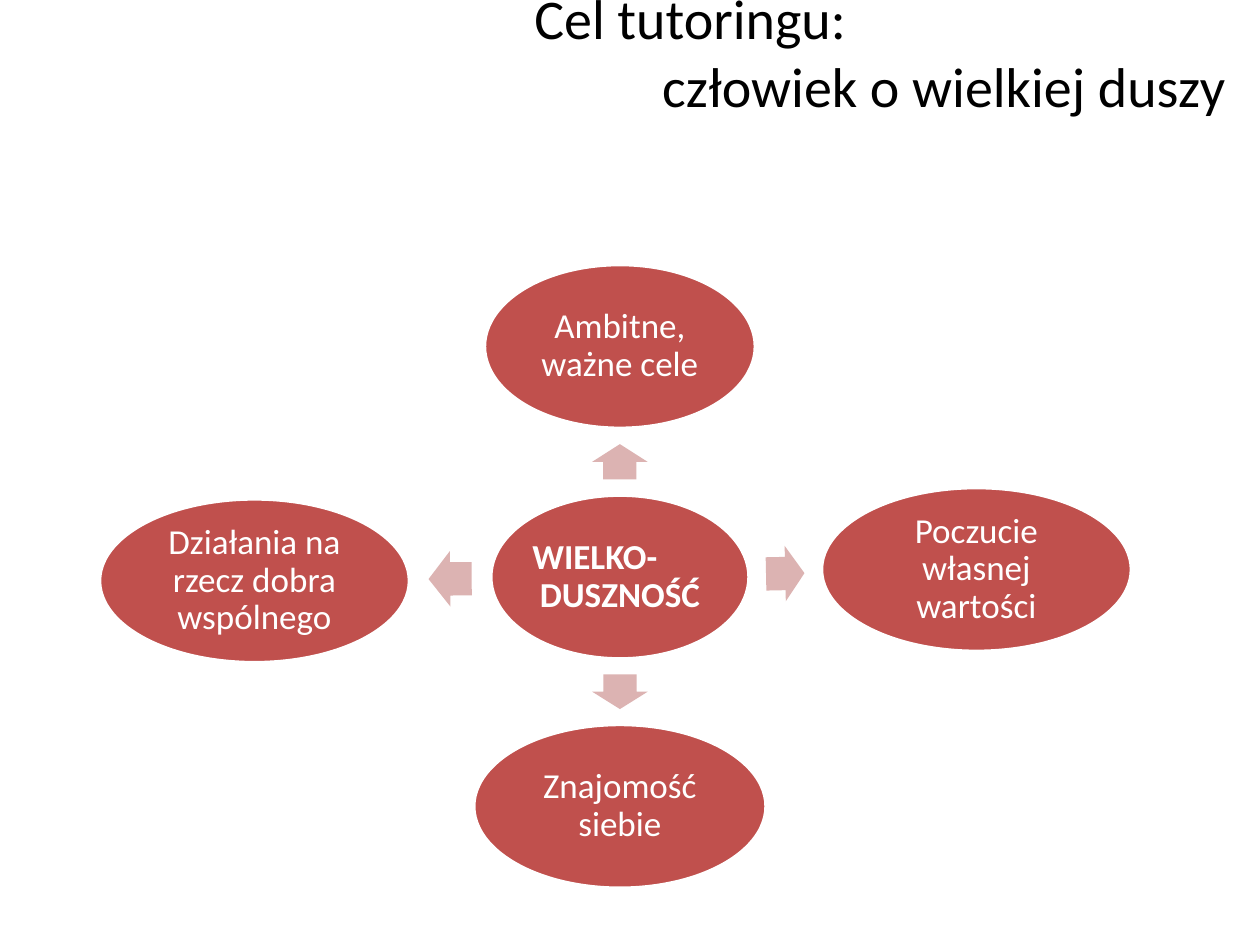
from dataclasses import dataclass
from math import atan2, degrees, hypot

from pptx import Presentation
from pptx.dml.color import RGBColor
from pptx.enum.shapes import MSO_SHAPE as Shape
from pptx.enum.text import MSO_ANCHOR as Anchor, MSO_AUTO_SIZE as AutoSize, PP_ALIGN as Align
from pptx.util import Inches, Pt

COLS, ROWS = 100, 75  # grid over the slide


@dataclass(frozen=True)
class Theme:
    font: str = "Calibri"
    title_size: int = 32
    node_size: int = 20
    ink: RGBColor = RGBColor(0x00, 0x00, 0x00)
    light: RGBColor = RGBColor(0xFF, 0xFF, 0xFF)
    node: RGBColor = RGBColor(0xC0, 0x50, 0x4D)
    arrow: RGBColor = RGBColor(0xDC, 0xB3, 0xB2)


@dataclass(frozen=True)
class Node:
    """Ellipse given by its centre and width in grid cells."""
    x: float
    y: float
    w: float
    lines: tuple
    h: float = 13


THEME = Theme()
TITLE = (("Cel tutoringu:", Align.LEFT), ("człowiek o wielkiej duszy", Align.RIGHT))
HUB = Node(49.2, 45.8, 20.5, (("WIELKO-", Align.LEFT), ("DUSZNOŚĆ", Align.CENTER)))
SPOKES = [
    Node(49.2, 27.5, 21.5, (("Ambitne, ważne cele", Align.CENTER),)),
    Node(77.5, 45.2, 24.6, (("Poczucie własnej wartości", Align.CENTER),)),
    Node(49.2, 64, 23.2, (("Znajomość siebie", Align.CENTER),)),
    Node(20.2, 46.1, 24.6, (("Działania na rzecz dobra wspólnego", Align.CENTER),)),
]
ARROW_WIDTH = 4.4
ARROW_SHARE = 0.53  # arrow length as a share of the gap it bridges


def set_attrs(obj, values):
    for name, value in values.items():
        setattr(obj, name, value)


def grid_box(prs, left, top, w, h):
    col, row = prs.slide_width / COLS, prs.slide_height / ROWS
    return [round(v) for v in (left * col, top * row, w * col, h * row)]


def write_lines(tf, lines, size, color, bold=False, spacing=1.0):
    for i, (text, align) in enumerate(lines):
        p = tf.paragraphs[0] if i == 0 else tf.add_paragraph()
        set_attrs(p, {"alignment": align, "line_spacing": spacing,
                      "space_before": Pt(0), "space_after": Pt(0)})
        r = p.add_run()
        r.text = text
        set_attrs(r.font, {"name": THEME.font, "size": Pt(size), "bold": bold})
        r.font.color.rgb = color


def add_title(prs, s):
    sp = s.shapes.title
    box = grid_box(prs, 41.4, 1.3, 56.9, 5.5)
    set_attrs(sp, dict(zip(("left", "top", "width", "height"), box)))
    tf = sp.text_frame
    set_attrs(tf, {"word_wrap": True, "auto_size": AutoSize.NONE,
                   "vertical_anchor": Anchor.MIDDLE})
    write_lines(tf, TITLE, THEME.title_size, THEME.ink)


def add_centred(prs, s, kind, x, y, w, h, fill):
    sp = s.shapes.add_shape(kind, *grid_box(prs, x - w / 2, y - h / 2, w, h))
    sp.shadow.inherit = False
    sp.fill.solid()
    sp.fill.fore_color.rgb = fill
    return sp


def add_node(prs, s, node, bold=False):
    sp = add_centred(prs, s, Shape.OVAL, node.x, node.y, node.w, node.h, THEME.node)
    sp.line.color.rgb = THEME.light
    sp.line.width = Pt(2)
    tf = sp.text_frame
    set_attrs(tf, {"word_wrap": True, "vertical_anchor": Anchor.MIDDLE})
    set_attrs(tf, {f"margin_{side}": Inches(0.03) for side in ("left", "top", "right", "bottom")})
    write_lines(tf, node.lines, THEME.node_size, THEME.light, bold, 0.9)


def add_arrow(prs, s, start, end):
    """Block arrow in the middle of the gap between two ellipses."""
    dx, dy = end.x - start.x, end.y - start.y
    dist = hypot(dx, dy)
    side = "w" if abs(dx) > abs(dy) else "h"
    near, far = getattr(start, side) / 2, dist - getattr(end, side) / 2
    t = (near + far) / 2 / dist
    sp = add_centred(prs, s, Shape.RIGHT_ARROW, start.x + t * dx, start.y + t * dy,
                     ARROW_SHARE * (far - near), ARROW_WIDTH, THEME.arrow)
    sp.line.fill.background()
    sp.adjustments[0], sp.adjustments[1] = 0.6, 0.5
    sp.rotation = degrees(atan2(dy, dx)) % 360


def main():
    prs = Presentation()
    set_attrs(prs, {"slide_width": Inches(10), "slide_height": Inches(7.5)})
    s = prs.slides.add_slide(prs.slide_layouts[5])
    add_title(prs, s)
    add_node(prs, s, HUB, bold=True)
    for spoke in SPOKES:
        add_arrow(prs, s, HUB, spoke)
        add_node(prs, s, spoke)
    prs.save("out.pptx")


if __name__ == "__main__":
    main()
